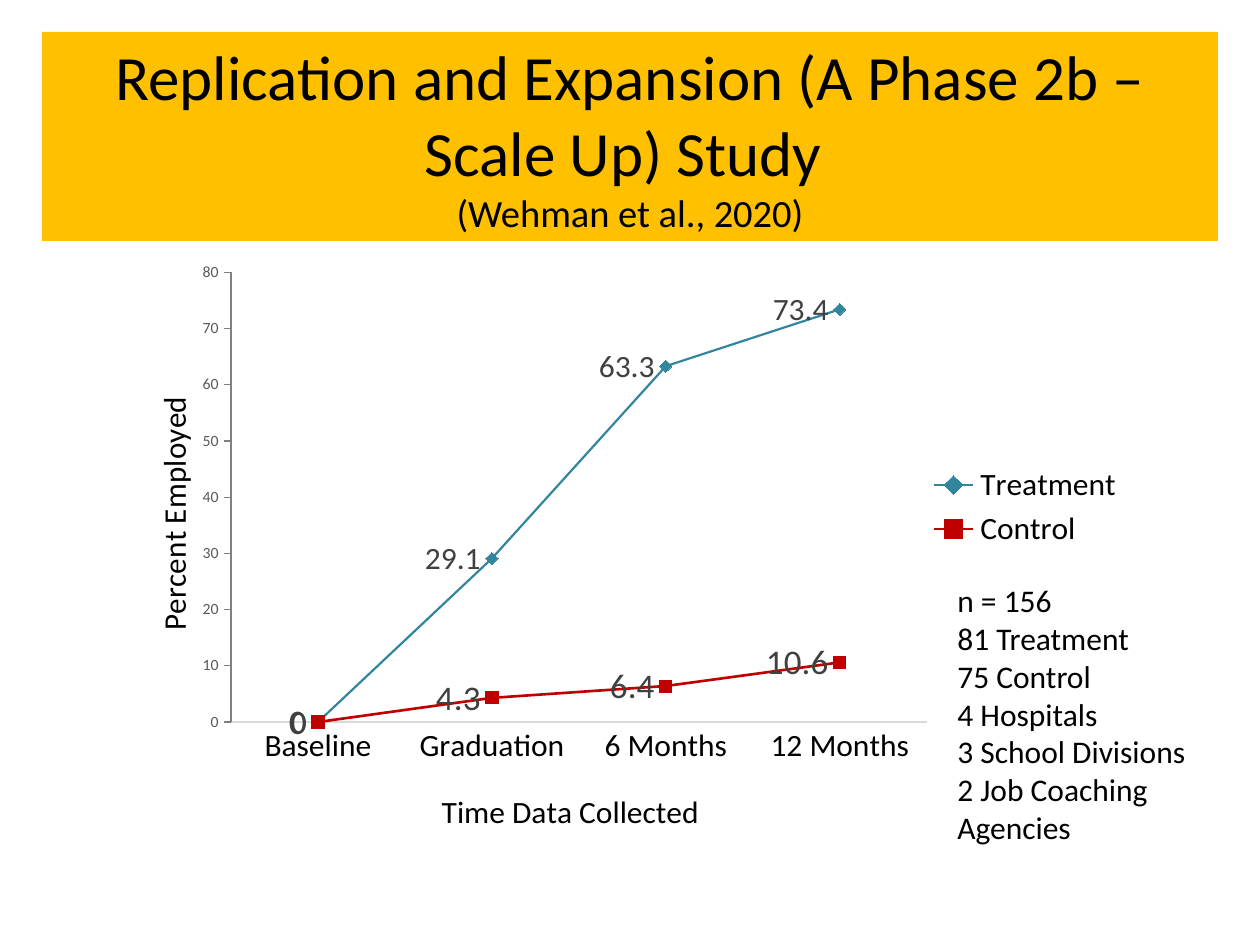
from lxml import etree
from pptx import Presentation
from pptx.chart.data import CategoryChartData
from pptx.dml.color import RGBColor
from pptx.enum.chart import (XL_CHART_TYPE, XL_LABEL_POSITION, XL_LEGEND_POSITION,
                             XL_MARKER_STYLE, XL_TICK_MARK)
from pptx.enum.shapes import MSO_SHAPE
from pptx.enum.text import MSO_ANCHOR, PP_ALIGN
from pptx.oxml.ns import qn
from pptx.util import Inches, Pt

PX = Inches(1) / 126


def style(font, size, color="000000"):
    font.name, font.size, font.bold = "Calibri", Pt(size), False
    font.color.rgb = RGBColor.from_string(color)


def place(element, index, **settings):
    """Give a chart part a manual layout, as fractions of the chart."""
    for old in element.findall(qn("c:layout")):
        element.remove(old)
    layout = etree.Element(qn("c:layout"))
    manual = etree.SubElement(layout, qn("c:manualLayout"))
    for name, value in settings.items():
        etree.SubElement(manual, qn("c:" + name)).set("val", str(value))
    element.insert(index, layout)


prs = Presentation()
prs.slide_width, prs.slide_height = Inches(10), Inches(7.5)
s = prs.slides.add_slide(prs.slide_layouts[6])

# Title band
sp = s.shapes.add_shape(MSO_SHAPE.RECTANGLE, *[int(v * PX) for v in (42, 32, 1176, 209)])
sp.shadow.inherit = False
sp.fill.solid()
sp.fill.fore_color.rgb = RGBColor.from_string("FFC000")
sp.line.fill.background()
tf = sp.text_frame
tf.word_wrap = True
tf.vertical_anchor = MSO_ANCHOR.MIDDLE
p = tf.paragraphs[0]
p.alignment = PP_ALIGN.CENTER
r = p.add_run()
r.text = "Replication and Expansion (A Phase 2b – Scale Up) Study "
style(r.font, 36)
p.add_line_break()
r = p.add_run()
r.text = "(Wehman et al., 2020)"
style(r.font, 22)

# Line chart
data = CategoryChartData()
data.categories = ["Baseline", "Graduation", "6 Months", "12 Months"]
data.add_series("Treatment", (0, 29.1, 63.3, 73.4))
data.add_series("Control", (0, 4.3, 6.4, 10.6))
chart = s.shapes.add_chart(XL_CHART_TYPE.LINE_MARKERS,
                           *[int(v * PX) for v in (126, 241, 1010, 600)], data).chart
style(chart.font, 10)
chart.has_title = False
plot = chart.plots[0]
plot.vary_by_categories = False
place(chart.element.find(".//" + qn("c:plotArea")), 0, layoutTarget="inner",
      xMode="edge", yMode="edge", x=0.104, y=0.053, w=0.689, h=0.761)

# Series and their labels
looks = [("31859C", 1.25, XL_MARKER_STYLE.DIAMOND, 18),
         ("C00000", 1.5, XL_MARKER_STYLE.SQUARE, 20)]
for series, (color, width, marker, size) in zip(plot.series, looks):
    rgb = RGBColor.from_string(color)
    series.smooth = False
    series.format.line.color.rgb = rgb
    series.format.line.width = Pt(width)
    series.marker.style, series.marker.size = marker, 7
    series.marker.format.fill.solid()
    series.marker.format.fill.fore_color.rgb = rgb
    series.marker.format.line.color.rgb = rgb
    labels = series.data_labels
    labels.show_value = True
    labels.position = XL_LABEL_POSITION.LEFT
    style(labels.font, size, "404040")

# Axes
val, cat = chart.value_axis, chart.category_axis
val.minimum_scale, val.maximum_scale, val.major_unit = 0, 80, 10
axes = [(cat, "Time Data Collected", 18, "000000", "D9D9D9", XL_TICK_MARK.NONE, 0.307, 0.92),
        (val, "Percent Employed", 9, "595959", "808080", XL_TICK_MARK.OUTSIDE, 0.02, 0.26)]
for axis, title, size, color, line, tick, x, y in axes:
    axis.has_major_gridlines = False
    axis.major_tick_mark, axis.minor_tick_mark = tick, XL_TICK_MARK.NONE
    axis.format.line.color.rgb = RGBColor.from_string(line)
    axis.format.line.width = Pt(0.75)
    style(axis.tick_labels.font, size, color)
    tf = axis.axis_title.text_frame
    tf.text = title
    style(tf.paragraphs[0].font, 18)
    place(axis.axis_title._element, 1, xMode="edge", yMode="edge", x=x, y=y)

# Legend
chart.has_legend = True
legend = chart.legend
legend.position = XL_LEGEND_POSITION.RIGHT
legend.include_in_layout = False
style(legend.font, 18)
place(legend._element, 1, xMode="edge", yMode="edge", x=0.79, y=0.37, w=0.2, h=0.16)

# Sample notes
tf = s.shapes.add_textbox(*[int(v * PX) for v in (945, 575, 262, 317)]).text_frame
tf.word_wrap = True
notes = ["n = 156", "81 Treatment", "75 Control", "4 Hospitals",
         "3 School Divisions", "2 Job Coaching Agencies"]
tf.text = "\n".join(notes)
for p in tf.paragraphs:
    style(p.font, 18)

prs.save("out.pptx")
